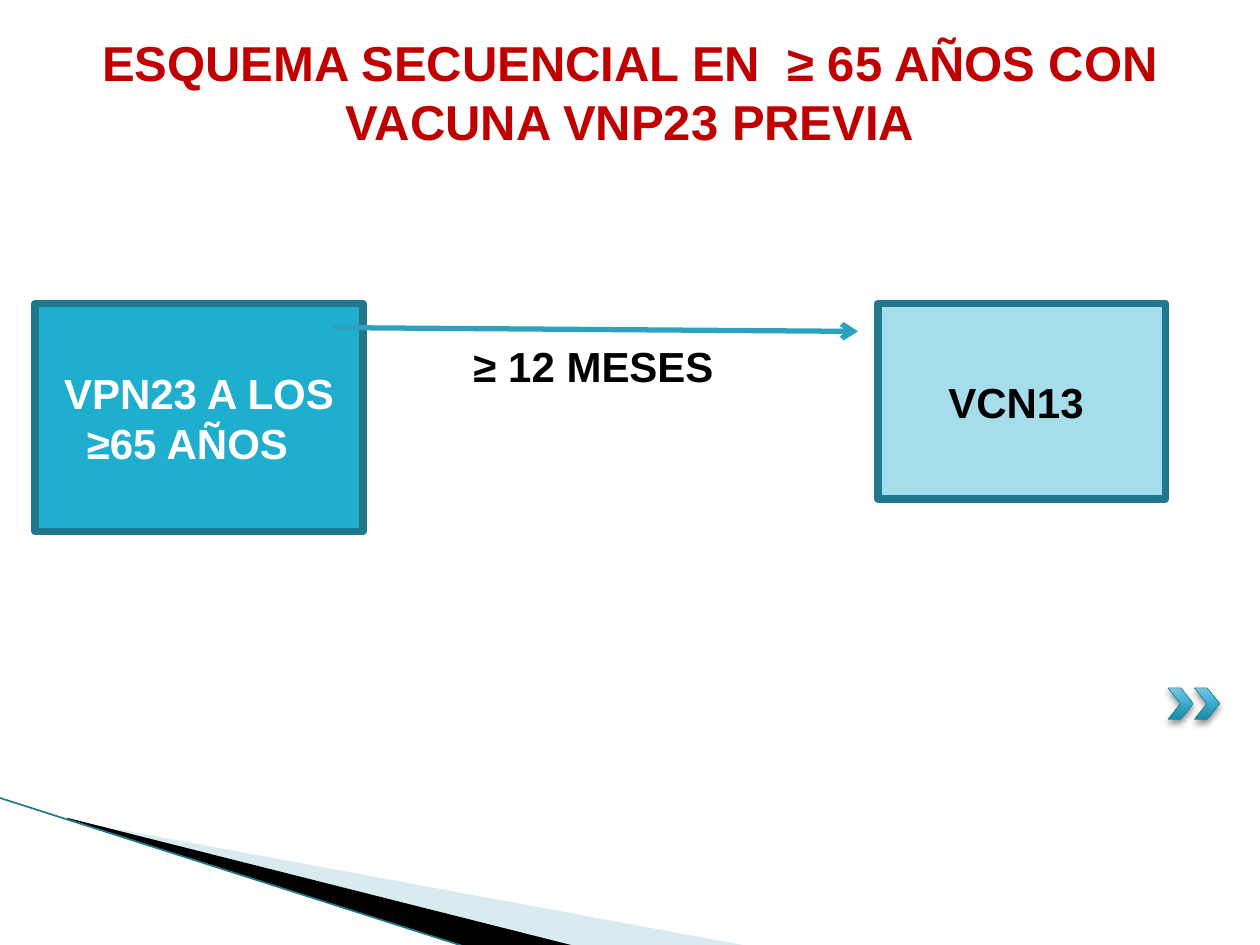
from lxml import etree
from pptx import Presentation
from pptx import util as u
from pptx.dml.color import RGBColor
from pptx.enum import shapes, text
from pptx.oxml import parse_xml
from pptx.oxml.ns import nsdecls, qn

RED, BLACK, WHITE = "C00000", "000000", "FFFFFF"
TEAL, DARK_TEAL, PALE_TEAL, ARROW_TEAL = "1FAECD", "21788D", "A6DDEA", "2DA2BF"
CHEVRON_STOPS = [(0, "158BA8"), (72, "51B8D9"), (100, "80C3DD")]


def color(hex_string):
    return RGBColor.from_string(hex_string)


def write(shape, words, size=24, ink=BLACK, align=text.PP_ALIGN.CENTER,
          anchor=text.MSO_ANCHOR.MIDDLE):
    frame = shape.text_frame
    frame.word_wrap = True
    frame.vertical_anchor = anchor
    paragraph = frame.paragraphs[0]
    paragraph.text = words
    paragraph.alignment = align
    font = paragraph.runs[0].font
    font.name, font.size, font.bold = "Arial", u.Pt(size), True
    font.color.rgb = color(ink)


class SlideBuilder:
    def __init__(self, slide):
        self.slide = slide

    def outline(self, shape, line, width):
        shape.line.color.rgb = color(line)
        shape.line.width = u.Pt(width)

    def title(self, words, *box):
        title = self.slide.shapes.title
        title.left, title.top, title.width, title.height = map(u.Inches, box)
        write(title, words, size=28, ink=RED, anchor=text.MSO_ANCHOR.TOP)

    def label(self, words, *box):
        shape = self.slide.shapes.add_textbox(*map(u.Inches, box))
        write(shape, words, align=text.PP_ALIGN.LEFT, anchor=text.MSO_ANCHOR.TOP)

    def box(self, words, *box, fill, ink):
        shape = self.slide.shapes.add_shape(
            shapes.MSO_SHAPE.RECTANGLE, *map(u.Inches, box))
        shape.shadow.inherit = False
        shape.fill.solid()
        shape.fill.fore_color.rgb = color(fill)
        self.outline(shape, DARK_TEAL, 4.33)
        write(shape, words, ink=ink)

    def line(self, *ends, line, width, arrow=False):
        connector = self.slide.shapes.add_connector(
            shapes.MSO_CONNECTOR.STRAIGHT, *map(u.Inches, ends))
        self.outline(connector, line, width)
        if arrow:
            line_xml = connector.line._get_or_add_ln()
            etree.SubElement(line_xml, qn("a:tailEnd"), type="arrow")
        etree.SubElement(connector._element.spPr, qn("a:effectLst"))

    def wedge(self, points, fill, opacity=100):
        start, *rest = [tuple(map(u.Inches, point)) for point in points]
        builder = self.slide.shapes.build_freeform(*start)
        builder.add_line_segments(rest, close=True)
        shape = builder.convert_to_shape()
        shape.shadow.inherit = False
        shape.fill.solid()
        shape.fill.fore_color.rgb = color(fill)
        shape.line.fill.background()
        if opacity < 100:
            fill_xml = shape._element.spPr.find(qn("a:solidFill"))
            etree.SubElement(fill_xml[0], qn("a:alpha"), val=str(opacity * 1000))

    def chevron(self, *box):
        shape = self.slide.shapes.add_shape(
            shapes.MSO_SHAPE.CHEVRON, *map(u.Inches, box))
        shape.fill.gradient()
        shape.fill.gradient_angle = 90
        properties = shape._element.spPr
        stops = properties.find(qn("a:gradFill")).find(qn("a:gsLst"))
        for stop in list(stops):
            stops.remove(stop)
        for position, stop_color in CHEVRON_STOPS:
            stop = etree.SubElement(stops, qn("a:gs"), pos=str(position * 1000))
            etree.SubElement(stop, qn("a:srgbClr"), val=stop_color)
        self.outline(shape, DARK_TEAL, 0.25)
        properties.append(parse_xml(
            f'<a:effectLst {nsdecls("a")}><a:outerShdw blurRad="{u.Pt(4)}" '
            f'dist="{u.Pt(2)}" dir="5400000" rotWithShape="0"><a:srgbClr val="{BLACK}">'
            '<a:alpha val="46000"/></a:srgbClr></a:outerShdw></a:effectLst>'))


def main():
    presentation = Presentation()
    presentation.slide_width, presentation.slide_height = u.Inches(10), u.Inches(7.5)
    title_only = presentation.slide_layouts[5]
    builder = SlideBuilder(presentation.slides.add_slide(title_only))

    builder.wedge([(0.55, 6.51), (5.95, 7.51), (4.56, 7.51), (0.55, 6.5)],
                  "A0CBDC", opacity=40)
    builder.wedge([(0.53, 6.49), (4.57, 7.51), (3.72, 7.52), (0.54, 6.5)], BLACK)
    builder.line(-0.01, 6.33, 3.71, 7.52, line=DARK_TEAL, width=0.95)
    for left in (9.48, 9.27):
        builder.chevron(left, 5.46, 0.2, 0.25)

    builder.title("ESQUEMA SECUENCIAL EN  ≥ 65 AÑOS CON VACUNA VNP23 PREVIA",
                  0, 0.21, 10, 1.04)
    builder.box("VPN23 A LOS ≥65 AÑOS  ", 0.28, 2.41, 2.6, 1.81, fill=TEAL, ink=WHITE)
    builder.line(2.64, 2.6, 6.81, 2.63, line=ARROW_TEAL, width=3, arrow=True)
    builder.box("VCN13 ", 6.97, 2.41, 2.28, 1.55, fill=PALE_TEAL, ink=BLACK)
    builder.label("≥ 12 MESES", 3.66, 2.65, 2.44, 0.5)

    presentation.save("out.pptx")


if __name__ == "__main__":
    main()
